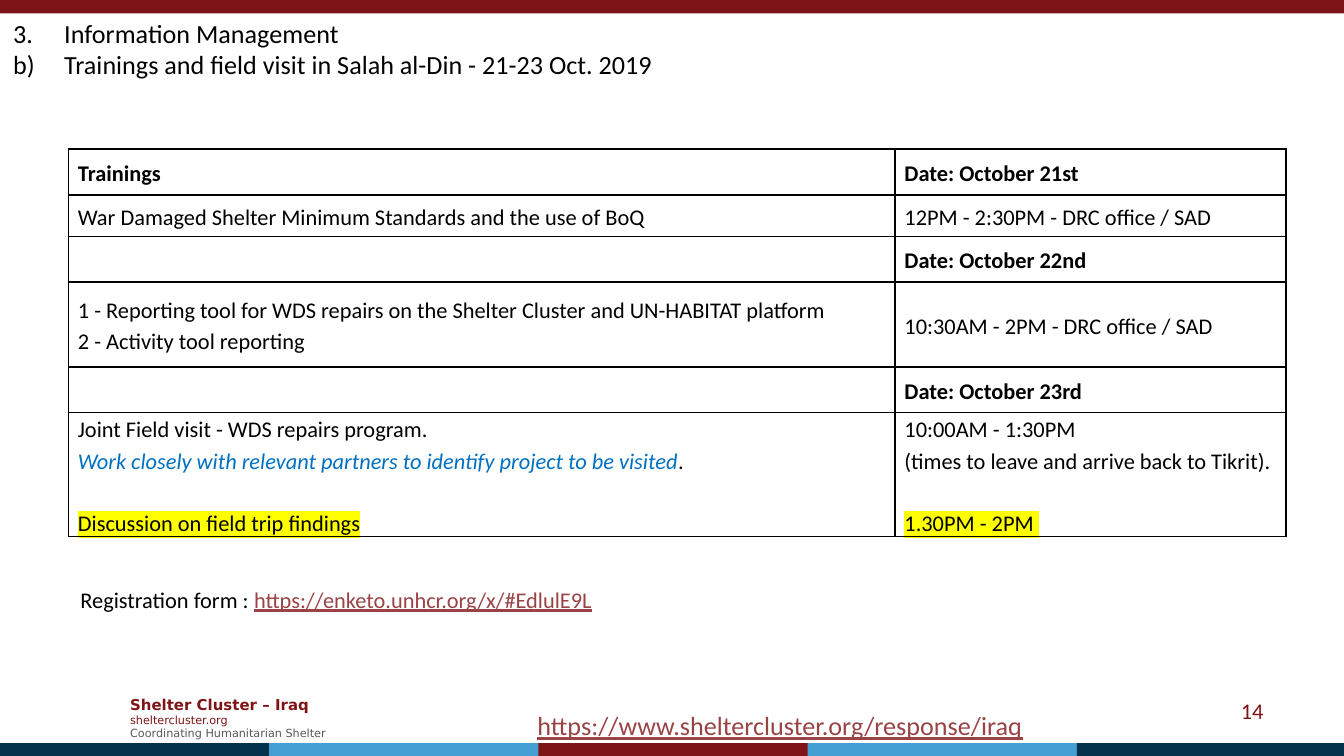
from dataclasses import dataclass
from typing import NamedTuple, Optional

from lxml import etree
from pptx import Presentation
from pptx import util as u
from pptx.dml.color import RGBColor
from pptx.enum import shapes, text
from pptx.oxml import ns

WIDTH = u.Inches(10)
HEIGHT = WIDTH * 9 // 16
UNIT = WIDTH // 100  # one grid column or row


@dataclass(frozen=True)
class Theme:
    red: str = "7F1416"
    navy: str = "04314C"
    sky: str = "459FD5"
    link: str = "994345"
    note: str = "0070C0"
    grey: str = "595959"
    black: str = "000000"
    mark: str = "FFFF00"
    sans: str = "Calibri"
    footer_sans: str = "DejaVu Sans"
    title: float = 14
    body: float = 12
    footer: float = 8
    small: float = 6


THEME = Theme()


class Frame(NamedTuple):
    """Left, top, width and height in grid units."""
    left: float
    top: float
    width: float
    height: float


@dataclass(frozen=True)
class Span:
    text: str
    size: float = THEME.body
    color: str = THEME.black
    font: str = THEME.sans
    bold: bool = False
    italic: bool = False
    underline: bool = False
    mark: Optional[str] = None


@dataclass(frozen=True)
class Line:
    spans: tuple[Span, ...]
    gap: float = 0  # points before the paragraph
    number: Optional[tuple[str, int]] = None  # numbering style and start


@dataclass(frozen=True)
class Block:
    frame: Frame
    lines: tuple[Line, ...]
    anchor: text.MSO_ANCHOR = text.MSO_ANCHOR.TOP
    align: text.PP_ALIGN = text.PP_ALIGN.LEFT
    wrap: bool = True


def line(words: str, gap: float = 0, number=None, **style) -> Line:
    return Line((Span(words, **style),), gap, number)


MIDDLE = text.MSO_ANCHOR.MIDDLE
BLANK_LINE = 16.8  # one table text line, in points

BLOCKS = (
    Block(Frame(8.7, 51.2, 17.3, 4.4), (
        line("Shelter Cluster – Iraq", size=THEME.footer, color=THEME.red,
             font=THEME.footer_sans, bold=True),
        line("sheltercluster.org", size=THEME.small, color=THEME.red, font=THEME.footer_sans),
        line("Coordinating Humanitarian Shelter", size=THEME.small, color=THEME.grey,
             font=THEME.footer_sans),
    ), MIDDLE),
    Block(Frame(71.7, 51.4, 23.3, 3), (line("14", color=THEME.red),),
          MIDDLE, text.PP_ALIGN.RIGHT),
    Block(Frame(39, 52.3, 38.5, 3.4), (
        line("https://www.sheltercluster.org/response/iraq", size=THEME.title,
             color=THEME.link, underline=True),), wrap=False),
    Block(Frame(0, 1.6, 100, 4), (
        line("Information Management", size=THEME.title, number=("arabicPeriod", 3)),
        line("Trainings and field visit in Salah al-Din - 21-23 Oct. 2019",
             size=THEME.title, number=("alphaLcParenR", 2)),
    ), MIDDLE),
    Block(Frame(5, 43.1, 40.2, 3), (
        Line((Span("Registration form : "),
              Span("https://enketo.unhcr.org/x/#EdlulE9L", color=THEME.link, underline=True))),
    ), wrap=False),
)

TABLE_FRAME = Frame(5.1, 11.1, 90.6, 28.6)
TABLE_COLUMNS = (61.5, 29.1)
TABLE_ROWS = (
    (3.4, (line("Trainings", bold=True),), (line("Date: October 21st", bold=True),)),
    (3.1, (line("War Damaged Shelter Minimum Standards and the use of BoQ"),),
     (line("12PM - 2:30PM - DRC office / SAD"),)),
    (3.4, (), (line("Date: October 22nd", bold=True),)),
    (6.3, (line("1 - Reporting tool for WDS repairs on the Shelter Cluster and UN-HABITAT platform"),
           line("2 - Activity tool reporting")),
     (line("10:30AM - 2PM - DRC office / SAD"),)),
    (3.4, (), (line("Date: October 23rd", bold=True),)),
    (9, (line("Joint Field visit - WDS repairs program."),
         Line((Span("Work closely with relevant partners to identify project to be visited",
                    color=THEME.note, italic=True), Span(".", italic=True))),
         line("Discussion on field trip findings", BLANK_LINE, mark=THEME.mark)),
     (line("10:00AM - 1:30PM"),
      line("(times to leave and arrive back to Tikrit)."),
      line("1.30PM - 2PM ", BLANK_LINE, mark=THEME.mark))),
)


def grid(units: float) -> int:
    return round(units * UNIT)


def place(frame: Frame) -> tuple[int, ...]:
    return tuple(grid(units) for units in frame)


def add_color(parent, color: str) -> None:
    etree.SubElement(parent, ns.qn("a:srgbClr"), val=color)


def write_span(para, span: Span) -> None:
    run = para.add_run()
    run.text = span.text
    font = run.font
    font.size, font.name = u.Pt(span.size), span.font
    font.bold, font.italic, font.underline = span.bold, span.italic, span.underline
    font.color.rgb = RGBColor.from_string(span.color)
    if span.mark:
        highlight = etree.Element(ns.qn("a:highlight"))
        add_color(highlight, span.mark)
        run._r.get_or_add_rPr().find(ns.qn("a:latin")).addprevious(highlight)


def write_lines(frame, lines: tuple[Line, ...], align, spacing: float = 1) -> None:
    for index, item in enumerate(lines):
        para = frame.add_paragraph() if index else frame.paragraphs[0]
        para.alignment, para.line_spacing = align, spacing
        if item.gap:
            para.space_before = u.Pt(item.gap)
        if item.number:
            props = para._p.get_or_add_pPr()
            props.set("marL", str(grid(3.8)))
            props.set("indent", str(-grid(3.8)))
            style, start = item.number
            etree.SubElement(props, ns.qn("a:buAutoNum"), type=style, startAt=str(start))
        for span in item.spans:
            write_span(para, span)


def add_block(page, block: Block) -> None:
    box = page.shapes.add_textbox(*place(block.frame))
    frame = box.text_frame
    frame.word_wrap, frame.vertical_anchor = block.wrap, block.anchor
    write_lines(frame, block.lines, block.align)


def add_bar(page, frame: Frame, color: str) -> None:
    bar = page.shapes.add_shape(shapes.MSO_SHAPE.RECTANGLE, *place(frame))
    bar.shadow.inherit = False
    bar.fill.solid()
    bar.fill.fore_color.rgb = RGBColor.from_string(color)
    bar.line.fill.background()


def add_borders(cell) -> None:
    props = cell._tc.get_or_add_tcPr()
    for index, side in enumerate(("lnL", "lnR", "lnT", "lnB")):
        border = etree.Element(ns.qn(f"a:{side}"), w=str(u.Pt(1)))
        add_color(etree.SubElement(border, ns.qn("a:solidFill")), THEME.black)
        props.insert(index, border)


def add_schedule(page) -> None:
    table = page.shapes.add_table(len(TABLE_ROWS), len(TABLE_COLUMNS), *place(TABLE_FRAME)).table
    table.first_row = table.horz_banding = False
    for column, width in zip(table.columns, TABLE_COLUMNS):
        column.width = grid(width)
    for row, (height, *contents) in zip(table.rows, TABLE_ROWS):
        row.height = grid(height)
        for cell, lines in zip(row.cells, contents):
            cell.fill.background()
            cell.margin_left = cell.margin_right = grid(0.7)
            cell.margin_top = cell.margin_bottom = 0
            cell.vertical_anchor = MIDDLE
            add_borders(cell)
            write_lines(cell.text_frame, lines, text.PP_ALIGN.JUSTIFY, 1.15)


def main() -> None:
    deck = Presentation()
    deck.slide_width, deck.slide_height = WIDTH, HEIGHT
    page = deck.slides.add_slide(deck.slide_layouts[6])
    add_bar(page, Frame(0, 0, 100, 1), THEME.red)
    stripes = (THEME.navy, THEME.sky, THEME.red, THEME.sky, THEME.navy)
    for index, color in enumerate(stripes):
        add_bar(page, Frame(index * 20.03, 55.3, 20.1, 1), color)
    for block in BLOCKS:
        add_block(page, block)
    add_schedule(page)
    deck.save("out.pptx")


if __name__ == "__main__":
    main()
